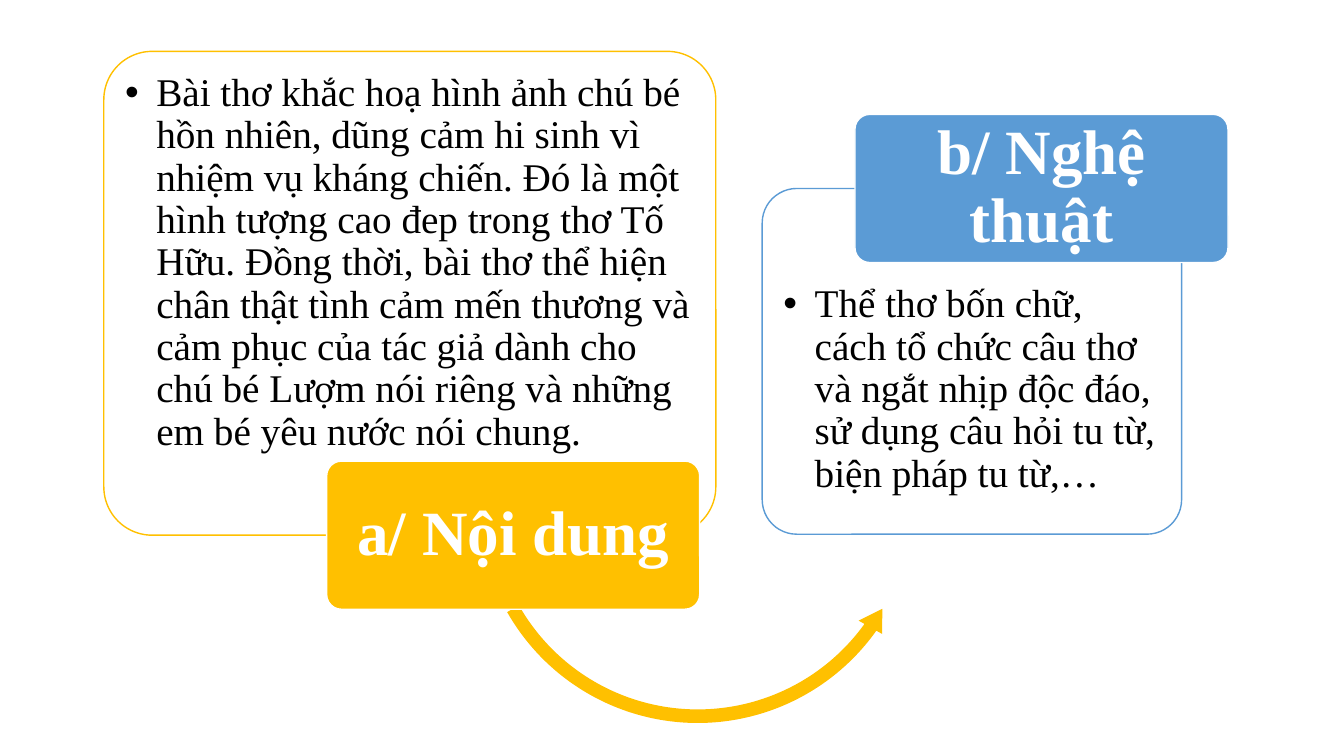
"""Build a slide that sums up a poem in two linked panels: content and art."""
from lxml.etree import SubElement
from pptx import Presentation
from pptx.dml.color import RGBColor
from pptx.enum.shapes import MSO_SHAPE
from pptx.enum.text import MSO_ANCHOR, PP_ALIGN
from pptx.oxml.ns import qn
from pptx.util import Inches, Pt

FONT = "Times New Roman"
WHITE, BLACK, GOLD, BLUE = "FFFFFF", "000000", "FFC000", "5B9BD5"
SECTIONS = [
    {
        "label": "a/ Nội dung",
        "text": "Bài thơ khắc hoạ hình ảnh chú bé hồn nhiên, dũng cảm hi sinh vì "
                "nhiệm vụ kháng chiến. Đó là một hình tượng cao đep trong thơ Tố Hữu. "
                "Đồng thời, bài thơ thể hiện chân thật tình cảm mến thương và cảm phục "
                "của tác giả dành cho chú bé Lượm nói riêng và những em bé yêu nước "
                "nói chung.",
        "color": GOLD, "panel": (1.03, 0.51, 6.07, 4.8),
        "label_left": 3.24, "label_below": True, "arrow": True,
    },
    {
        "label": "b/ Nghệ thuật",
        "text": "Thể thơ bốn chữ, cách tổ chức câu thơ và ngắt nhịp độc đáo, "
                "sử dụng câu hỏi tu từ, biện pháp tu từ,…",
        "color": BLUE, "panel": (7.56, 1.87, 4.16, 3.43),
        "label_left": 8.48, "label_below": False, "arrow": False,
    },
]
LABEL_WIDTH, LABEL_HEIGHT = 3.7, 1.47
PANEL_INSET = 0.21
CORNER = 0.1
CORNER_INSET = 0.29
ARROW_BOX = (4.68, 2.76, 4.48, 4.48)
ARROW_ADJUSTMENTS = (0.03, 3.56, 21.32, 90.25, 0.03)


def rgb(value):
    """Turn a hex string into a colour."""
    return RGBColor.from_string(value)


def add_box(page, kind, area, fill, line=None, adjustments=()):
    """Add a flat preset shape."""
    box = page.shapes.add_shape(kind, *map(Inches, area))
    box.shadow.inherit = False
    for index, value in enumerate(adjustments):
        box.adjustments[index] = value
    box.fill.solid()
    box.fill.fore_color.rgb = rgb(fill)
    if line:
        box.line.color.rgb = rgb(line)
        box.line.width = Pt(1)
    else:
        box.line.fill.background()
    return box


def write(box, text, size, color, insets, bold=False, bullet=False,
          align=PP_ALIGN.LEFT, anchor=MSO_ANCHOR.TOP):
    """Write one formatted paragraph, with insets measured from the box edges."""
    frame = box.text_frame
    frame.word_wrap = True
    frame.vertical_anchor = anchor
    corner = min(box.width, box.height) * CORNER * CORNER_INSET
    sides = ("margin_left", "margin_top", "margin_right", "margin_bottom")
    for side, inset in zip(sides, insets):
        setattr(frame, side, int(Inches(inset) - corner))
    para = frame.paragraphs[0]
    para.alignment = align
    para.line_spacing = 0.9
    if bullet:
        properties = para._p.get_or_add_pPr()
        properties.set("marL", str(Inches(0.31)))
        properties.set("indent", str(-Inches(0.31)))
        SubElement(properties, qn("a:buFont"), typeface="Arial")
        SubElement(properties, qn("a:buChar"), char="•")
    span = para.add_run()
    span.text = text
    span.font.name = FONT
    span.font.size = Pt(size)
    span.font.bold = bold
    span.font.color.rgb = rgb(color)


def add_section(page, section):
    """Add a panel and the label that straddles its top or bottom edge."""
    left, top, width, height = section["panel"]
    below = section["label_below"]
    overlap = PANEL_INSET + LABEL_HEIGHT / 2
    insets = (PANEL_INSET, PANEL_INSET if below else overlap,
              PANEL_INSET, overlap if below else PANEL_INSET)
    panel = add_box(page, MSO_SHAPE.ROUNDED_RECTANGLE, section["panel"], WHITE,
                    section["color"], [CORNER])
    solid = panel.fill._xPr.find(qn("a:solidFill"))
    SubElement(solid[0], qn("a:alpha"), val="90000")
    write(panel, section["text"], 28, BLACK, insets, bullet=True)
    if section["arrow"]:
        add_box(page, MSO_SHAPE.LEFT_CIRCULAR_ARROW, ARROW_BOX, section["color"],
                adjustments=ARROW_ADJUSTMENTS)
    edge = top + height if below else top
    area = (section["label_left"], edge - LABEL_HEIGHT / 2, LABEL_WIDTH, LABEL_HEIGHT)
    label = add_box(page, MSO_SHAPE.ROUNDED_RECTANGLE, area, section["color"],
                    WHITE, [CORNER])
    write(label, section["label"], 45, WHITE, (0.1, 0.08, 0.1, 0.08), bold=True,
          align=PP_ALIGN.CENTER, anchor=MSO_ANCHOR.MIDDLE)


def main():
    """Build and save the deck."""
    deck = Presentation()
    deck.slide_width, deck.slide_height = Inches(13.33), Inches(7.5)
    page = deck.slides.add_slide(deck.slide_layouts[6])
    for section in SECTIONS:
        add_section(page, section)
    deck.save("out.pptx")


if __name__ == "__main__":
    main()
